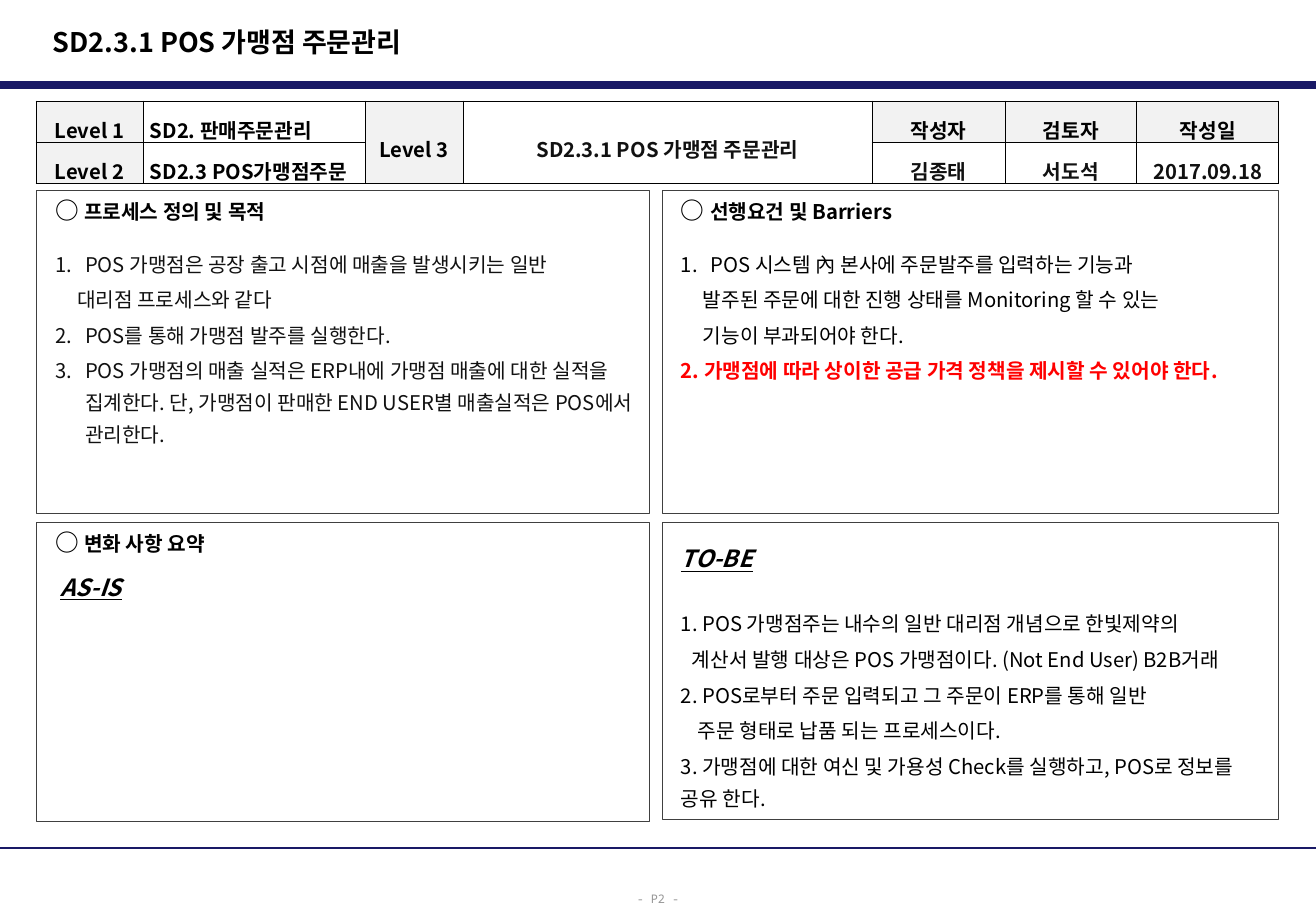
"""Build the process definition slide for POS franchise order management."""
from lxml import etree
from pptx import Presentation
from pptx.dml.color import RGBColor
from pptx.enum.shapes import MSO_CONNECTOR, MSO_SHAPE
from pptx.enum.text import MSO_ANCHOR, PP_ALIGN
from pptx.oxml.ns import qn
from pptx.util import Pt

PX = 7526
STRAIGHT = MSO_CONNECTOR.STRAIGHT
RECTANGLE = MSO_SHAPE.RECTANGLE
MIDDLE, TOP = MSO_ANCHOR.MIDDLE, MSO_ANCHOR.TOP
LEFT, CENTER = PP_ALIGN.LEFT, PP_ALIGN.CENTER
SANS, MONO = "Noto Sans CJK KR", "Noto Sans Mono"
BLACK, INK, RED, NAVY, GRAY = "000000", "111111", "FF0000", "191966", "969696"
TITLE = "SD2.3.1 POS 가맹점 주문관리"


def rgb(code):
    return RGBColor.from_string(code)


def style(span, size, color=BLACK, bold=False, face=SANS):
    span.font.size = Pt(size)
    span.font.bold = bold
    span.font.color.rgb = rgb(color)
    span.font.name = face
    etree.SubElement(span.font._element, qn("a:ea"), typeface=face)


deck = Presentation()
deck.slide_width, deck.slide_height = 1316 * PX, 911 * PX
page = deck.slides.add_slide(deck.slide_layouts[6])

for y, weight in [(85, 4.5), (848, 1.5)]:
    rule = page.shapes.add_connector(STRAIGHT, 0, y * PX, 1316 * PX, y * PX)
    rule.line.color.rgb = rgb(NAVY)
    rule.line.width = Pt(weight)
    etree.SubElement(rule._element.spPr, qn("a:effectLst"))

labels = [
    (41, 19, 864, 46, TITLE, 16, BLACK, True, SANS, LEFT, MIDDLE, 1.0),
    (624, 881, 68, 30, "- P2 -", 7, GRAY, False, MONO, CENTER, TOP, 1.3),
]
for x, y, width, height, text, size, color, bold, face, align, anchor, spacing in labels:
    frame = page.shapes.add_textbox(x * PX, y * PX, width * PX, height * PX).text_frame
    frame.word_wrap = True
    frame.vertical_anchor = anchor
    frame.text = text
    para = frame.paragraphs[0]
    para.alignment = align
    para.line_spacing = spacing
    style(para.runs[0], size, color, bold, face)

HEAD, SUBHEAD, NUMBERED, PLAIN, ALERT = "head", "subhead", "numbered", "plain", "alert"
panels = [
    (36, 190, 613, 324, 6, [
        (HEAD, "프로세스 정의 및 목적", 0, 0, INK),
        (NUMBERED, "POS 가맹점은 공장 출고 시점에 매출을 발생시키는 일반", 30, 12, INK),
        (PLAIN, "대리점 프로세스와 같다", 22, 2.4, INK),
        (NUMBERED, "POS를 통해 가맹점 발주를 실행한다.", 30, 2.4, INK),
        (NUMBERED, "POS 가맹점의 매출 실적은 ERP내에 가맹점 매출에 대한 실적을 집계한다. "
         "단, 가맹점이 판매한 END USER별 매출실적은 POS에서 관리한다.", 30, 2.4, INK),
    ]),
    (662, 190, 617, 324, 6, [
        (HEAD, "선행요건 및 Barriers", 0, 0, BLACK),
        (NUMBERED, "POS 시스템 內 본사에 주문발주를 입력하는 기능과", 30, 12, BLACK),
        (PLAIN, "발주된 주문에 대한 진행 상태를 Monitoring 할 수 있는", 22, 2.4, BLACK),
        (PLAIN, "기능이 부과되어야 한다.", 22, 2.4, BLACK),
        (ALERT, "2. 가맹점에 따라 상이한 공급 가격 정책을 제시할 수 있어야 한다.", 0, 2.4, RED),
    ]),
    (36, 522, 613, 299, 6, [
        (HEAD, "변화 사항 요약", 0, 0, BLACK),
        (SUBHEAD, "AS-IS", 5, 9.5, BLACK),
    ]),
    (662, 522, 617, 298, 22, [
        (SUBHEAD, "TO-BE", 0, 0, BLACK),
        (PLAIN, "1. POS 가맹점주는 내수의 일반 대리점 개념으로 한빛제약의", 0, 19, BLACK),
        (PLAIN, "계산서 발행 대상은 POS 가맹점이다. (Not End User) B2B거래", 11, 2.4, BLACK),
        (PLAIN, "2. POS로부터 주문 입력되고 그 주문이 ERP를 통해 일반", 0, 2.4, BLACK),
        (PLAIN, "주문 형태로 납품 되는 프로세스이다.", 17, 2.4, BLACK),
        (PLAIN, "3. 가맹점에 대한 여신 및 가용성 Check를 실행하고, POS로 정보를 공유 한다.",
         0, 2.4, BLACK),
    ]),
]
for x, y, width, height, inset, lines in panels:
    box = page.shapes.add_shape(RECTANGLE, x * PX, y * PX, width * PX, height * PX)
    box.shadow.inherit = False
    box.fill.background()
    box.line.color.rgb = rgb("404040")
    box.line.width = Pt(0.5)
    frame = box.text_frame
    frame.word_wrap = True
    frame.vertical_anchor = TOP
    frame.margin_left, frame.margin_right = 19 * PX, 12 * PX
    frame.margin_top, frame.margin_bottom = inset * PX, 6 * PX
    frame.text = "\n".join(line[1] for line in lines)
    number = 0
    for para, (kind, text, indent, gap, color) in zip(frame.paragraphs, lines):
        para.alignment = LEFT
        if gap:
            para.space_before = Pt(gap)
        if kind not in (HEAD, SUBHEAD):
            para.line_spacing = 1.3
        properties = para._p.get_or_add_pPr()
        properties.set("marL", str(indent * PX))
        if kind == NUMBERED:
            number += 1
            properties.set("indent", str(-indent * PX))
            etree.SubElement(properties, qn("a:buFont"), typeface=SANS)
            etree.SubElement(properties, qn("a:buAutoNum"), type="arabicPeriod",
                             startAt=str(number))
        if kind == HEAD:
            para.text = "○ "
            style(para.runs[0], 14, BLACK, True)
            span = para.add_run()
            span.text = text
            style(span, 12, BLACK, True)
        elif kind == SUBHEAD:
            style(para.runs[0], 14, color, True)
            para.runs[0].font.italic = True
            para.runs[0].font.underline = True
        else:
            style(para.runs[0], 12, color, kind == ALERT)

widths = [107, 222, 98, 409, 133, 132, 142]
rows = [
    ["Level 1", "SD2. 판매주문관리", "Level 3", TITLE, "작성자", "검토자", "작성일"],
    ["Level 2", "SD2.3 POS가맹점주문", "", "", "김종태", "서도석", "2017.09.18"],
]
shaded = {(0, 0), (1, 0), (0, 2), (1, 2), (0, 4), (0, 5), (0, 6)}
dark_ink = {(0, 3), (1, 4), (1, 5), (1, 6)}
table = page.shapes.add_table(2, 7, 36 * PX, 101 * PX, sum(widths) * PX, 82 * PX).table
for column, width in zip(table.columns, widths):
    column.width = width * PX
for row in table.rows:
    row.height = 41 * PX
for merged in (2, 3):
    table.cell(0, merged).merge(table.cell(1, merged))

for r, texts in enumerate(rows):
    for c, text in enumerate(texts):
        cell = table.cell(r, c)
        cell.margin_left = cell.margin_right = 7 * PX
        cell.margin_top, cell.margin_bottom = 5 * PX, PX
        cell.vertical_anchor = MIDDLE
        properties = cell._tc.get_or_add_tcPr()
        for side in ("lnL", "lnR", "lnT", "lnB"):
            border = etree.SubElement(properties, qn("a:" + side), w=str(Pt(0.5)))
            paint = etree.SubElement(border, qn("a:solidFill"))
            etree.SubElement(paint, qn("a:srgbClr"), val=BLACK)
        if (r, c) in shaded:
            cell.fill.solid()
            cell.fill.fore_color.rgb = rgb("F2F2F2")
        else:
            cell.fill.background()
        if text:
            cell.text_frame.text = text
            para = cell.text_frame.paragraphs[0]
            para.alignment = LEFT if c == 1 else CENTER
            para.line_spacing = 1.3
            style(para.runs[0], 12, INK if (r, c) in dark_ink else BLACK, True)

deck.save("out.pptx")
